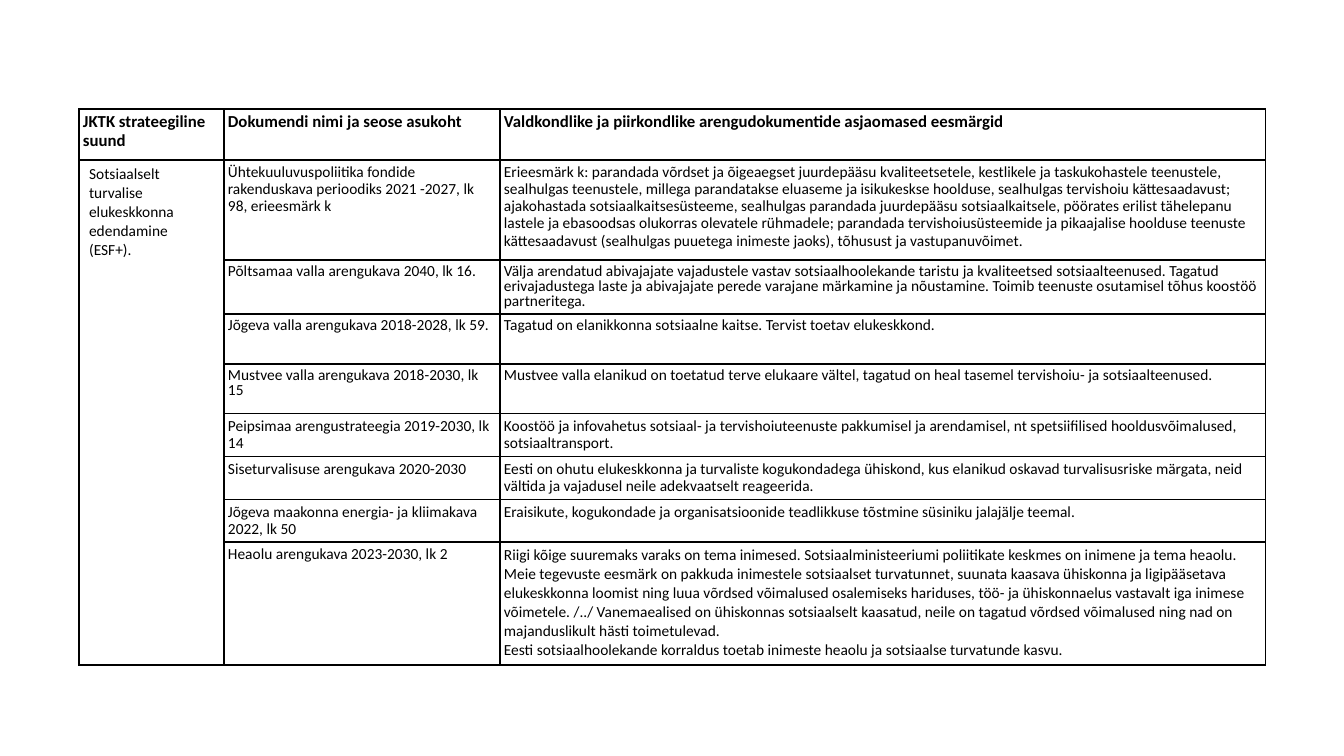
from lxml.etree import SubElement
from pptx import Presentation
from pptx.dml.color import RGBColor
from pptx.oxml.ns import qn
from pptx.util import Pt

SCALE = 914400 / 100.8
BLACK = RGBColor(0, 0, 0)
FONT = "Calibri"
INSET = 4
COLS = [145, 276, 766]
HEADS = [
    "JKTK strateegiline suund",
    "Dokumendi nimi ja seose asukoht",
    "Valdkondlike ja piirkondlike arengudokumentide asjaomased eesmärgid",
]
AIM = "Sotsiaalselt turvalise elukeskkonna edendamine (ESF+)."
PLANS = [
    (100, 0.9, "Ühtekuuluvuspoliitika fondide rakenduskava perioodiks 2021 -2027, lk 98, erieesmärk k",
     0.9, ["Erieesmärk k: parandada võrdset ja õigeaegset juurdepääsu kvaliteetsetele, kestlikele ja "
           "taskukohastele teenustele, sealhulgas teenustele, millega parandatakse eluaseme ja isikukeskse "
           "hoolduse, sealhulgas tervishoiu kättesaadavust; ajakohastada sotsiaalkaitsesüsteeme, sealhulgas "
           "parandada juurdepääsu sotsiaalkaitsele, pöörates erilist tähelepanu lastele ja ebasoodsas olukorras "
           "olevatele rühmadele; parandada tervishoiusüsteemide ja pikaajalise hoolduse teenuste kättesaadavust "
           "(sealhulgas puuetega inimeste jaoks), tõhusust ja vastupanuvõimet."]),
    (54, 0.8, "Põltsamaa valla arengukava 2040, lk 16.",
     0.8, ["Välja arendatud abivajajate vajadustele vastav sotsiaalhoolekande taristu ja kvaliteetsed "
           "sotsiaalteenused. Tagatud erivajadustega laste ja abivajajate perede varajane märkamine ja "
           "nõustamine. Toimib teenuste osutamisel tõhus koostöö partneritega."]),
    (50, 0.8, "Jõgeva valla arengukava 2018-2028, lk 59.",
     0.8, ["Tagatud on elanikkonna sotsiaalne kaitse. Tervist toetav elukeskkond."]),
    (50, 0.8, "Mustvee valla arengukava 2018-2030, lk 15",
     0.8, ["Mustvee valla elanikud on toetatud terve elukaare vältel, tagatud on heal tasemel "
           "tervishoiu- ja sotsiaalteenused."]),
    (43, 0.9, "Peipsimaa arengustrateegia 2019-2030, lk 14",
     0.9, ["Koostöö ja infovahetus sotsiaal- ja tervishoiuteenuste pakkumisel ja arendamisel, nt "
           "spetsiifilised hooldusvõimalused, sotsiaaltransport."]),
    (43, 0.9, "Siseturvalisuse arengukava 2020-2030",
     0.9, ["Eesti on ohutu elukeskkonna ja turvaliste kogukondadega ühiskond, kus elanikud oskavad "
           "turvalisusriske märgata, neid vältida ja vajadusel neile adekvaatselt reageerida."]),
    (42, 0.9, "Jõgeva maakonna energia- ja kliimakava 2022, lk 50",
     0.9, ["Eraisikute, kogukondade ja organisatsioonide teadlikkuse tõstmine süsiniku jalajälje teemal."]),
    (123, 0.9, "Heaolu arengukava 2023-2030, lk 2",
     1.0, ["Riigi kõige suuremaks varaks on tema inimesed. Sotsiaalministeeriumi poliitikate keskmes on inimene "
           "ja tema heaolu. Meie tegevuste eesmärk on pakkuda inimestele sotsiaalset turvatunnet, suunata "
           "kaasava ühiskonna ja ligipääsetava elukeskkonna loomist ning luua võrdsed võimalused osalemiseks "
           "hariduses, töö- ja ühiskonnaelus vastavalt iga inimese võimetele. /../ Vanemaealised on ühiskonnas "
           "sotsiaalselt kaasatud, neile on tagatud võrdsed võimalused ning nad on majanduslikult hästi "
           "toimetulevad.",
           "Eesti sotsiaalhoolekande korraldus toetab inimeste heaolu ja sotsiaalse turvatunde kasvu."]),
]


def px(n):
    """Turn pixels into EMU."""
    return round(n * SCALE)


def frame(cell):
    """Give a cell thin black borders and no fill."""
    props = cell._tc.get_or_add_tcPr()
    for side in ("a:lnL", "a:lnR", "a:lnT", "a:lnB"):
        line = SubElement(props, qn(side), w=str(Pt(1)))
        fill = SubElement(line, qn("a:solidFill"))
        SubElement(fill, qn("a:srgbClr"), val=str(BLACK))
    cell.fill.background()


def write(cell, texts, gap, size=11, bold=False, inset=INSET):
    """Fill a cell with one paragraph per text."""
    if inset:
        cell.margin_left = cell.margin_right = px(inset)
        cell.margin_top = cell.margin_bottom = px(inset)
    body = cell.text_frame
    for i, text in enumerate(texts):
        para = body.add_paragraph() if i else body.paragraphs[0]
        para.line_spacing = gap
        run = para.add_run()
        run.text = text
        font = run.font
        font.name, font.size, font.bold = FONT, Pt(size), bold
        font.color.rgb = BLACK


def add_grid(slide):
    """Add the bare table with its sizes and borders."""
    rows = [51] + [plan[0] for plan in PLANS]
    shape = slide.shapes.add_table(
        len(rows), len(COLS), px(79), px(109), px(sum(COLS)), px(sum(rows)))
    table = shape.table
    table.first_row = table.horz_banding = False
    for col, width in zip(table.columns, COLS):
        col.width = px(width)
    for row, height in zip(table.rows, rows):
        row.height = px(height)
    for cell in table.iter_cells():
        frame(cell)
    return table


def main():
    """Build the slide and save it."""
    deck = Presentation()
    deck.slide_width, deck.slide_height = px(1344), px(756)
    slide = deck.slides.add_slide(deck.slide_layouts[6])
    table = add_grid(slide)
    for i, head in enumerate(HEADS):
        write(table.cell(0, i), [head], 0.9, size=12, bold=True)
    table.cell(1, 0).merge(table.cell(len(PLANS), 0))
    write(table.cell(1, 0), [AIM], 1.0, inset=None)
    for i, (_, gap, name, space, goals) in enumerate(PLANS, 1):
        write(table.cell(i, 1), [name], gap)
        write(table.cell(i, 2), goals, space)
    deck.save("out.pptx")


if __name__ == "__main__":
    main()
